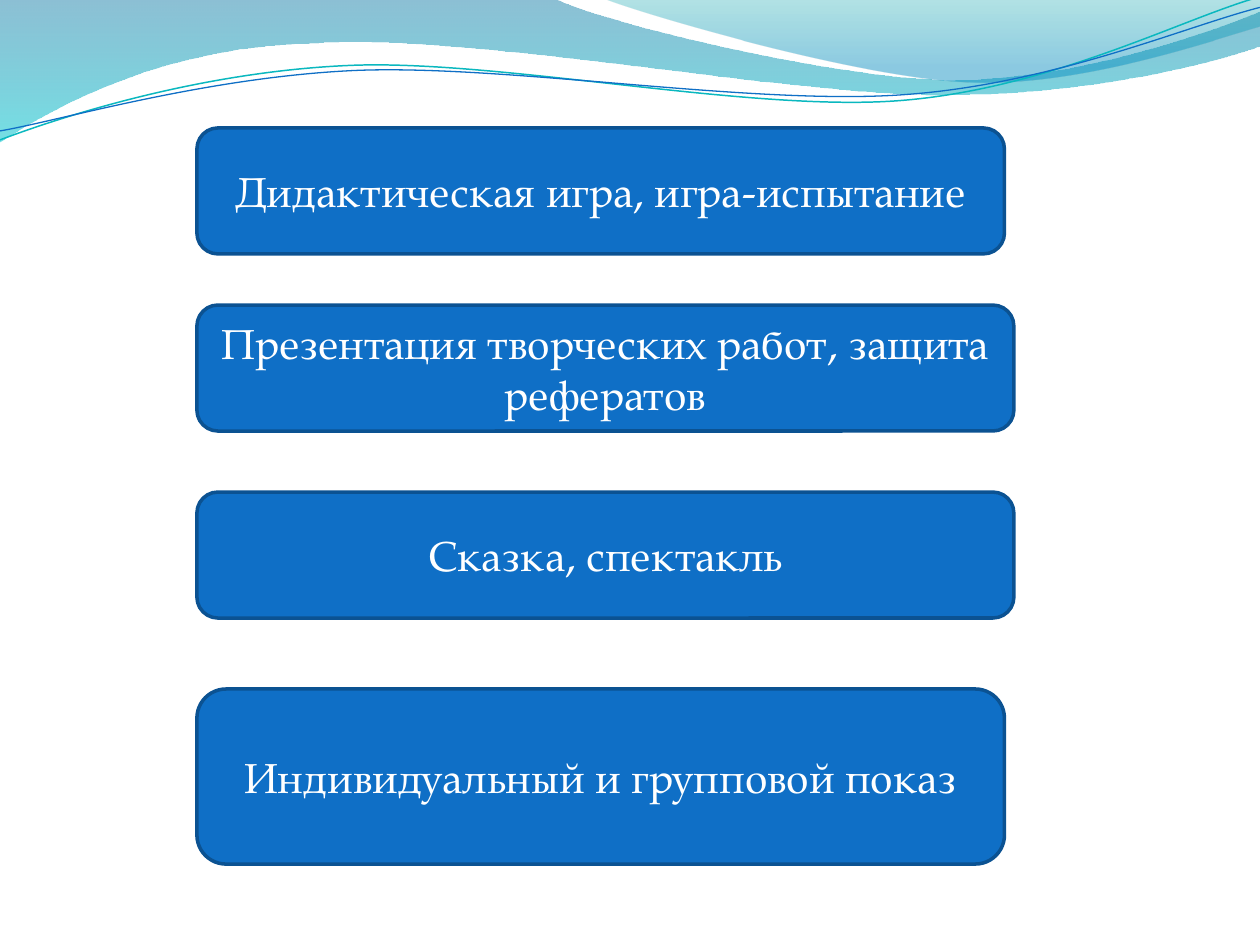
"""Slide with four lesson forms in rounded boxes below a wave header."""
from dataclasses import dataclass
from math import cos, radians, sin
from typing import Optional

from lxml.etree import SubElement
from pptx import Presentation
from pptx.dml.color import RGBColor
from pptx.enum.shapes import MSO_SHAPE as Preset
from pptx.enum.text import MSO_ANCHOR as Anchor, PP_ALIGN as Align
from pptx.oxml.ns import qn
from pptx.util import Cm, Pt

Point = tuple[float, float]
FONT = "TeX Gyre Pagella"
BOX_LEFT = 3.97
BLUE = "0F6FC6"


@dataclass
class Stop:
    """Gradient stop: position from 0 to 1, colour, opacity in percent."""
    position: float
    color: str
    opacity: int


@dataclass
class Wave:
    """Outline in cm; a segment is one end point or three Bezier points."""
    start: Point
    segments: list[tuple[Point, ...]]
    gradient: tuple[Stop, ...] = ()
    line_color: Optional[str] = None
    line_width: float = 0
    tilt: float = 0


@dataclass
class LessonForm:
    """Rounded box with one lesson form; lengths in cm."""
    text: str
    top: float
    width: float
    height: float = 2.54


BANDS = [
    Wave((0, 0), [
        ((11.18, -0.03),),
        ((12.09, 0.43), (16.87, 1.6), (19.25, 1.6)),
        ((21.67, 1.6), (24.33, 0.66), (25.4, 0.23)),
        ((25.43, 0.91),),
        ((24.97, 1.12), (22.1, 1.93), (18.95, 1.91)),
        ((15.8, 1.91), (9.7, 0.71), (6.53, 0.86)),
        ((3.28, 0.91), (1.17, 2.11), (-0.03, 2.87)),
        ((0, 0),),
    ], gradient=(Stop(0, "0074A1", 45), Stop(1, "00C6CF", 55))),
    Wave((12.17, -0.03), [
        ((12.93, 0.28), (17.32, 1.57), (19.53, 1.65)),
        ((21.74, 1.75), (24.41, 0.81), (25.4, 0.53)),
        ((25.4, 0),),
        ((12.17, -0.03),),
    ], gradient=(Stop(0, "00A1A9", 30), Stop(0.8, "008BBF", 45))),
]

STRANDS = [
    Wave((0, 2.82), [
        ((1.22, 2.36), (4.01, 1.45), (7.04, 1.32)),
        ((10.03, 1.19), (15.06, 2.26), (18.11, 2.03)),
        ((21.16, 1.8), (23.83, 0.38), (25.35, -0.05)),
    ], line_color="0AB8BF", line_width=0.85, tilt=-2.7),
    Wave((0, 2.64), [
        ((1.19, 2.44), (4.17, 1.55), (7.19, 1.42)),
        ((10.24, 1.3), (15.16, 2.13), (18.21, 1.91)),
        ((21.23, 1.7), (23.9, 0.53), (25.4, 0.15)),
    ], line_color=BLUE, line_width=0.75, tilt=-2.7),
]

LESSON_FORMS = [
    LessonForm("Дидактическая игра, игра-испытание", 2.58, 16.28),
    LessonForm("Презентация творческих работ, защита рефератов", 6.15, 16.47),
    LessonForm("Сказка, спектакль", 9.92, 16.47),
    LessonForm("Индивидуальный и групповой показ", 13.89, 16.28, 3.53),
]


def rgb(color: str) -> RGBColor:
    """Turn a hex string into a colour."""
    return RGBColor.from_string(color)


def turn(point: Point, degrees: float) -> Point:
    """Turn a point clockwise around the slide's top left corner."""
    x, y = point
    c, s = cos(radians(degrees)), sin(radians(degrees))
    return x * c - y * s, x * s + y * c


def fill_gradient(shape, stops: tuple[Stop, ...]) -> None:
    """Fill a shape from top to bottom with translucent colours."""
    shape.fill.gradient()
    shape.fill.gradient_angle = 270
    for target, stop in zip(shape.fill.gradient_stops, stops):
        target.position = stop.position
        target.color.rgb = rgb(stop.color)
    colors = shape._element.spPr.iter(qn("a:srgbClr"))
    for color, stop in zip(list(colors), stops):
        SubElement(color, qn("a:alpha"), val=str(stop.opacity * 1000))


def bend(shape, segments: list[list[Point]], origin: Point) -> None:
    """Make Bezier curves of the straight segments that have handles."""
    edges = list(shape._element.spPr.iter(qn("a:lnTo")))
    for edge, segment in zip(edges, segments):
        if len(segment) == 1:
            continue
        edge.tag = qn("a:cubicBezTo")
        for corner in list(edge):
            edge.remove(corner)
        for x, y in segment:
            SubElement(edge, qn("a:pt"), x=str(Cm(x - origin[0])),
                       y=str(Cm(y - origin[1])))


def draw_wave(shapes, wave: Wave) -> None:
    """Draw one band or one strand of the header."""
    segments = [[turn(point, -wave.tilt) for point in segment]
                for segment in wave.segments]
    ends = [turn(wave.start, -wave.tilt)] + [part[-1] for part in segments]
    corners = [(Cm(x), Cm(y)) for x, y in ends]
    builder = shapes.build_freeform(*corners[0])
    builder.add_line_segments(corners[1:], close=bool(wave.gradient))
    shape = builder.convert_to_shape()
    bend(shape, segments, tuple(min(axis) for axis in zip(*ends)))
    half_width, half_height = shape.width / 2, shape.height / 2
    center = turn((shape.left + half_width, shape.top + half_height), wave.tilt)
    shape.left = round(center[0] - half_width)
    shape.top = round(center[1] - half_height)
    shape.rotation = wave.tilt
    shape.shadow.inherit = False
    if wave.gradient:
        fill_gradient(shape, wave.gradient)
        shape.line.fill.background()
    else:
        shape.fill.background()
        shape.line.color.rgb = rgb(wave.line_color)
        shape.line.width = Pt(wave.line_width)


def write(shape, text: str, *, size: float = 24, color: str = "FFFFFF",
          align: Align = Align.CENTER, anchor: Anchor = Anchor.MIDDLE) -> None:
    """Put formatted text into a shape."""
    frame = shape.text_frame
    frame.word_wrap = True
    frame.vertical_anchor = anchor
    paragraph = frame.paragraphs[0]
    paragraph.alignment = align
    run = paragraph.add_run()
    run.text = text
    run.font.name = FONT
    run.font.size = Pt(size)
    run.font.color.rgb = rgb(color)


def draw_lesson_form(slide, form: LessonForm) -> None:
    """Draw one rounded box with its text."""
    box = slide.shapes.add_shape(
        Preset.ROUNDED_RECTANGLE, Cm(BOX_LEFT), Cm(form.top),
        Cm(form.width), Cm(form.height))
    box.shadow.inherit = False
    box.fill.solid()
    box.fill.fore_color.rgb = rgb(BLUE)
    box.line.color.rgb = rgb("0B5292")
    box.line.width = Pt(2)
    write(box, form.text)


def main() -> None:
    """Build and save the slide."""
    deck = Presentation()
    deck.slide_width, deck.slide_height = Cm(25.4), Cm(19.05)
    slide = deck.slides.add_slide(deck.slide_layouts[6])
    for band in BANDS:
        draw_wave(slide.shapes, band)
    strands = slide.shapes.add_group_shape()
    for strand in STRANDS:
        draw_wave(strands.shapes, strand)
    for form in LESSON_FORMS:
        draw_lesson_form(slide, form)
    deck.save("out.pptx")


if __name__ == "__main__":
    main()
